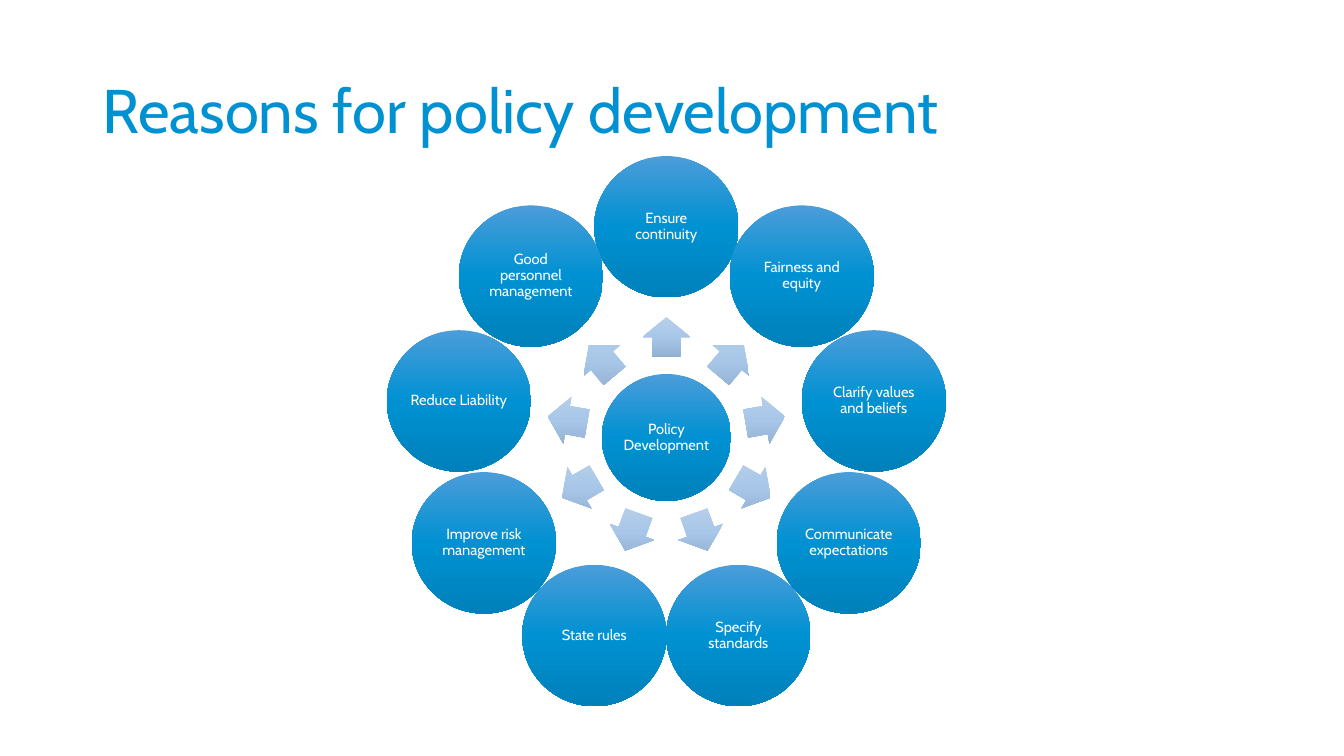
"""Build the slide on reasons for policy development as a radial cycle."""
import math
import pptx
import pptx.util
import pptx.oxml
import pptx.dml.color
import pptx.enum.shapes
import pptx.enum.text
from pptx.oxml import ns

Pt = pptx.util.Pt
SHAPES = pptx.enum.shapes.MSO_SHAPE
ALIGN = pptx.enum.text.PP_ALIGN
MIDDLE = pptx.enum.text.MSO_ANCHOR.MIDDLE
COLORS = {
    "title": "0091D2",
    "label": "FFFFFF",
    "circle": ["4B9DD9", "0091D2", "0081BB"],
    "arrow": ["B7CEEA", "A8C7E8", "92B0D2"],
}
CENTER_X, CENTER_Y = 476, 312.5
CIRCLE_RADIUS, ARROW_RADIUS = 150.5, 71.8
REASONS = [
    "Ensure continuity", "Fairness and equity", "Clarify values and beliefs",
    "Communicate expectations", "Specify standards", "State rules",
    "Improve risk management", "Reduce Liability", "Good personnel management",
]


def add_gradient_shape(kind, angle, distance, width, height, colors):
    x = CENTER_X + distance * math.cos(math.radians(angle))
    y = CENTER_Y + distance * math.sin(math.radians(angle))
    shape = page.shapes.add_shape(
        kind, Pt(x - width / 2), Pt(y - height / 2), Pt(width), Pt(height))
    shape.shadow.inherit = False
    shape.line.fill.background()
    stops = "".join(
        f'<a:gs pos="{index * 50000}"><a:srgbClr val="{color}"/></a:gs>'
        for index, color in enumerate(colors))
    gradient = pptx.oxml.parse_xml(
        f'<a:gradFill {ns.nsdecls("a")} rotWithShape="0"><a:gsLst>{stops}</a:gsLst>'
        '<a:lin ang="5400000" scaled="0"/></a:gradFill>')
    shape.fill.gradient()
    properties = shape.element.spPr
    properties.replace(properties.find(ns.qn("a:gradFill")), gradient)
    return shape


def add_circle(label, angle, distance, width, height):
    circle = add_gradient_shape(
        SHAPES.OVAL, angle, distance, width, height, COLORS["circle"])
    frame = circle.text_frame
    frame.word_wrap = True
    frame.vertical_anchor = MIDDLE
    frame.margin_left = frame.margin_right = Pt(1.3)
    frame.margin_top = frame.margin_bottom = Pt(1.3)
    para = frame.paragraphs[0]
    para.text = label
    para.alignment = ALIGN.CENTER
    para.line_spacing = 0.9
    para.font.name = "Cabin"
    para.font.size = Pt(10.5)
    para.font.color.rgb = pptx.dml.color.RGBColor.from_string(COLORS["label"])


deck = pptx.Presentation()
deck.slide_width, deck.slide_height = Pt(960), Pt(540)
page = deck.slides.add_slide(deck.slide_layouts[5])

title = page.shapes.title
title.left, title.top, title.width, title.height = Pt(66), Pt(28.75), Pt(828), Pt(104.4)
title.text_frame.text = "Reasons for policy development"
title.text_frame.vertical_anchor = MIDDLE
title.text_frame.auto_size = pptx.enum.text.MSO_AUTO_SIZE.NONE
para = title.text_frame.paragraphs[0]
para.alignment = ALIGN.LEFT
para.line_spacing = 0.9
para.font.name = "Cabin"
para.font.size = Pt(44)
para.font.color.rgb = pptx.dml.color.RGBColor.from_string(COLORS["title"])

add_circle("Policy Development", 0, 0, 92.2, 90.7)
for index, reason in enumerate(REASONS):
    angle = index * 360 / len(REASONS) - 90
    arrow = add_gradient_shape(
        SHAPES.RIGHT_ARROW, angle, ARROW_RADIUS, 28.5, 34, COLORS["arrow"])
    arrow.rotation = angle % 360
    arrow.adjustments[0], arrow.adjustments[1] = 0.6, 0.5
    add_circle(reason, angle, CIRCLE_RADIUS, 103, 101)

deck.save("out.pptx")
